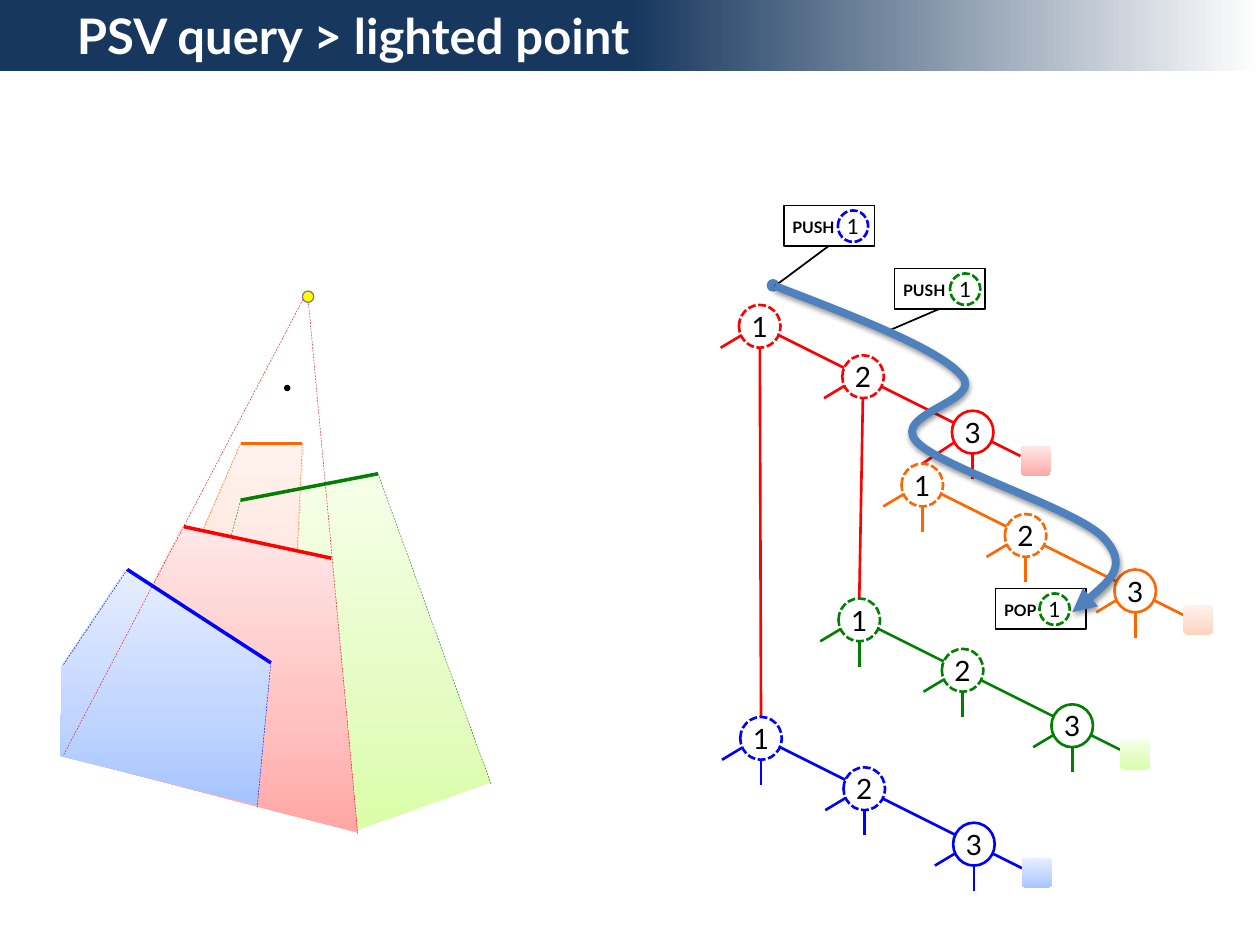
"""Build the slide on a PSV query for a lighted point."""
from dataclasses import dataclass, field

from lxml import etree
from pptx import Presentation
from pptx import util as u
from pptx.dml.color import RGBColor
from pptx.enum import dml, shapes, text
from pptx.oxml import ns


@dataclass(frozen=True)
class Theme:
    font: str = "Lato"
    black: str = "000000"
    white: str = "FFFFFF"
    navy: str = "17375E"
    route: str = "4F81BD"
    light: str = "FFFF00"
    grey: str = "808080"
    title: int = 28
    node: int = 16
    token: int = 12
    label: int = 9
    hues: dict = field(default_factory=lambda: {
        "red": "FF0000", "orange": "FF6600", "green": "008000", "blue": "0000FF"})
    shades: dict = field(default_factory=lambda: {
        "red": ("FFA6A5", "FFC0BF", "FFE7E7"),
        "orange": ("FFD2BD", "FFDED0", "FFF2ED"),
        "green": ("DAFDA7", "E4FCC2", "F5FFE7"),
        "blue": ("A4C4FF", "BFD4FF", "E6EEFF")})


T = Theme()
SHAPE = shapes.MSO_SHAPE
DASH = dml.MSO_LINE
NODE_W, NODE_H = 0.33, 0.34
STEPS = ((0, 0), (0.82, 0.4), (1.69, 0.84))
ROOTS = {"red": (6.03, 2.59), "orange": (7.32, 3.85),
         "green": (6.82, 4.92), "blue": (6.04, 5.86)}
CALLOUTS = (("PUSH", 6.22, 1.63, 0.43, "blue", (6.15, 2.27)),
            ("PUSH", 7.1, 2.13, 0.44, "green", (7.04, 2.63)),
            ("POP", 7.9, 4.67, 0.35, "green", None))
ROUTE = (((6.8, 2.52), (7.45, 2.77), (7.63, 2.98)),
         ((7.82, 3.18), (7.08, 3.28), (7.27, 3.5)),
         ((7.45, 3.71), (8.55, 4.04), (8.76, 4.27)),
         ((8.96, 4.49), (8.74, 4.68), (8.51, 4.86)))
ZONES = {"green": ((1.91, 3.97), (1.24, 6.18), (2.83, 6.59), (3.89, 6.21), (2.99, 3.77)),
         "orange": ((1.91, 3.52), (2.41, 3.52), (2.26, 6.44), (0.78, 6.07)),
         "red": ((1.45, 4.18), (2.63, 4.43), (2.84, 6.61), (0.5, 6)),
         "blue": ((1, 4.52), (2.15, 5.25), (2.04, 6.39), (0.48, 6), (0.49, 5.29))}
EDGES = {"red": ((1.46, 4.18), (2.63, 4.43)), "blue": ((1.01, 4.52), (2.15, 5.26)),
         "green": ((1.91, 3.97), (3, 3.76)), "orange": ((1.91, 3.52), (2.4, 3.52))}
RAYS = {"red": (((2.44, 2.31), (2.84, 6.62)), ((2.44, 2.31), (0.5, 6))),
        "blue": (((1.01, 4.52), (0.5, 5.28)), ((2.15, 5.26), (2.04, 6.42))),
        "green": (((1.91, 3.97), (1.83, 4.27)), ((3, 3.76), (3.9, 6.23))),
        "orange": (((1.91, 3.52), (1.61, 4.21)), ((2.4, 3.52), (2.36, 4.36)))}


def cm(*inches):
    """Turn layout units of one inch into a list of Cm lengths."""
    return [u.Cm(v * 2.54) for v in inches]


def apply(obj, formats):
    """Set each format value on an object."""
    for name, value in formats.items():
        setattr(obj, name, value)


def paint_line(line, color, width, dash=None):
    """Format an outline or a connector line."""
    line.fill.solid()
    line.fill.fore_color.rgb = RGBColor.from_string(color)
    apply(line, {"width": u.Pt(width), "dash_style": dash})


def paint_gradient(sp, stops, angle):
    """Fill a shape with a linear gradient of (percent, color) stops."""
    sp.fill.gradient()
    sp.fill.gradient_angle = angle
    gs_list = sp._element.spPr.find(".//" + ns.qn("a:gsLst"))
    for gs in list(gs_list):
        gs_list.remove(gs)
    for pos, color in stops:
        gs = etree.SubElement(gs_list, ns.qn("a:gs"), pos=str(pos * 1000))
        etree.SubElement(gs, ns.qn("a:srgbClr"), val=color)


def paint_shade(sp, hue):
    """Fill a zone or leaf with the shade of its hue, without outline."""
    paint_gradient(sp, zip((0, 35, 100), T.shades[hue]), 90)
    sp.line.fill.background()
    sp.shadow.inherit = False


def write(sp, words, size, color, align, bold=False, **frame):
    """Write one formatted paragraph into a shape."""
    tf = sp.text_frame
    apply(tf, {"word_wrap": True, "auto_size": text.MSO_AUTO_SIZE.NONE, **frame})
    p = tf.paragraphs[0]
    p.alignment = align
    r = p.add_run()
    r.text = words
    apply(r.font, {"name": T.font, "size": u.Pt(size), "bold": bold})
    r.font.color.rgb = RGBColor.from_string(color)


def add_shape(s, kind, box, fill=None, line=None, width=0.75, dash=None):
    """Add a preset shape with a plain fill and outline."""
    sp = s.shapes.add_shape(kind, *cm(*box))
    sp.shadow.inherit = False
    if fill:
        sp.fill.solid()
        sp.fill.fore_color.rgb = RGBColor.from_string(fill)
    else:
        sp.fill.background()
    if line:
        paint_line(sp.line, line, width, dash)
    return sp


def add_line(s, start, end, color, width=1.5, dash=None):
    """Add a straight connector without shadow."""
    c = s.shapes.add_connector(shapes.MSO_CONNECTOR.STRAIGHT, *cm(*start, *end))
    paint_line(c.line, color, width, dash)
    etree.SubElement(c._element.spPr, ns.qn("a:effectLst"))
    return c


def add_node(s, box, number, hue, size, dash):
    """Add a numbered circle."""
    sp = add_shape(s, SHAPE.OVAL, box, T.white, T.hues[hue], 1.5, dash)
    write(sp, str(number), size, T.black, text.PP_ALIGN.CENTER,
          vertical_anchor=text.MSO_ANCHOR.MIDDLE,
          margin_left=0, margin_right=0, margin_top=0, margin_bottom=0)


def add_tree(s, hue, left=None, down=None):
    """Add a three-node tree, with links to other trees given per node."""
    x0, y0 = ROOTS[hue]
    color = T.hues[hue]
    add_line(s, (x0 + 0.01, y0), (x0 + 2.07, y0 + 1.03), color)
    for i, (dx, dy) in enumerate(STEPS):
        x, y = x0 + dx, y0 + dy
        add_line(s, (x, y + 0.07), (down or {}).get(i, (x, y + 0.37)), color)
        add_line(s, (x - 0.01, y - 0.01), (left or {}).get(i, (x - 0.31, y + 0.17)), color)
        box = (x - NODE_W / 2, y - NODE_H / 2, NODE_W, NODE_H)
        add_node(s, box, i + 1, hue, T.node, DASH.SQUARE_DOT if i < 2 else None)
    paint_shade(add_shape(s, SHAPE.ROUNDED_RECTANGLE, (x0 + 2.07, y0 + 0.95, 0.24, 0.24)), hue)


def add_callout(s, words, x, y, offset, hue, target):
    """Add a stack operation box, led to its target on the route."""
    tb = s.shapes.add_textbox(*cm(x - 0.03, y + 0.05, 0.79, 0.25))
    write(tb, words, T.label, T.black, text.PP_ALIGN.LEFT, True)
    add_node(s, (x + offset, y + 0.04, 0.24, 0.25), 1, hue, T.token, DASH.SQUARE_DOT)
    frame = add_shape(s, SHAPE.RECTANGLE, (x, y, 0.72, 0.32), None, T.black, 1)
    if target:
        add_line(s, (x + 0.36, y + 0.32), target, T.black, 1).begin_connect(frame, 2)


def add_zone(s, hue, points):
    """Add a closed shaded polygon."""
    fb = s.shapes.build_freeform(*cm(*points[0]))
    fb.add_line_segments([cm(*pt) for pt in points[1:]], close=True)
    paint_shade(fb.convert_to_shape(), hue)


def add_route(s):
    """Add the curved traversal arrow with its soft shadow."""
    fb = s.shapes.build_freeform(*cm(6.15, 2.27))
    fb.add_line_segments([cm(8.84, 4.87)], close=False)
    sp = fb.convert_to_shape()
    sp.fill.background()
    paint_line(sp.line, T.route, 4.5)
    outline = sp._element.spPr.find(".//" + ns.qn("a:path"))
    outline.remove(outline.find(ns.qn("a:lnTo")))
    for curve in ROUTE:
        bez = etree.SubElement(outline, ns.qn("a:cubicBezTo"))
        for pt in curve:
            x, y = cm(*pt)
            etree.SubElement(bez, ns.qn("a:pt"), x=str(x - sp.left), y=str(y - sp.top))
    etree.SubElement(sp.line._get_or_add_ln(), ns.qn("a:tailEnd"), type="triangle")
    sp.shadow.inherit = False
    effects = sp._element.spPr.find(ns.qn("a:effectLst"))
    shadow = etree.SubElement(effects, ns.qn("a:outerShdw"), blurRad="40000",
                              dist="20000", dir="5400000", rotWithShape="0")
    color = etree.SubElement(shadow, ns.qn("a:srgbClr"), val=T.black)
    etree.SubElement(color, ns.qn("a:alpha"), val="38000")


def add_scene(s):
    """Add the light, its shadow zones and the query point."""
    for hue, points in ZONES.items():
        add_zone(s, hue, points)
    for hue, rays in RAYS.items():
        for start, end in rays:
            add_line(s, start, end, T.hues[hue], 0.25, DASH.DASH)
    for hue, (start, end) in EDGES.items():
        add_line(s, start, end, T.hues[hue], 2)
    add_shape(s, SHAPE.OVAL, (2.4, 2.31, 0.09, 0.09), T.light, T.grey)
    add_shape(s, SHAPE.OVAL, (2.26, 3.06, 0.04, 0.04), T.black, T.black)


def set_title(s, words):
    """Format the title placeholder as a fading banner."""
    sp = s.shapes.title
    apply(sp, dict(zip(("left", "top", "width", "height"), cm(0, -0.01, 10, 0.57))))
    paint_gradient(sp, ((50, T.navy), (100, T.white)), 0)
    write(sp, words, T.title, T.white, text.PP_ALIGN.LEFT, True,
          vertical_anchor=text.MSO_ANCHOR.MIDDLE, margin_left=u.Cm(1.55))


def main():
    """Build and save the slide."""
    prs = Presentation()
    prs.slide_width, prs.slide_height = cm(10, 7.5)
    s = prs.slides.add_slide(prs.slide_layouts[5])
    set_title(s, "PSV query > lighted point")
    tops = {hue: (x, y - NODE_H / 2) for hue, (x, y) in ROOTS.items()}
    add_tree(s, "red", {2: tops["orange"]}, {0: tops["blue"], 1: tops["green"]})
    for hue in ("orange", "green", "blue"):
        add_tree(s, hue)
    add_shape(s, SHAPE.OVAL, (6.09, 2.22, 0.09, 0.09), T.route, T.route)
    for callout in CALLOUTS:
        add_callout(s, *callout)
    add_route(s)
    add_scene(s)
    prs.save("out.pptx")


if __name__ == "__main__":
    main()
